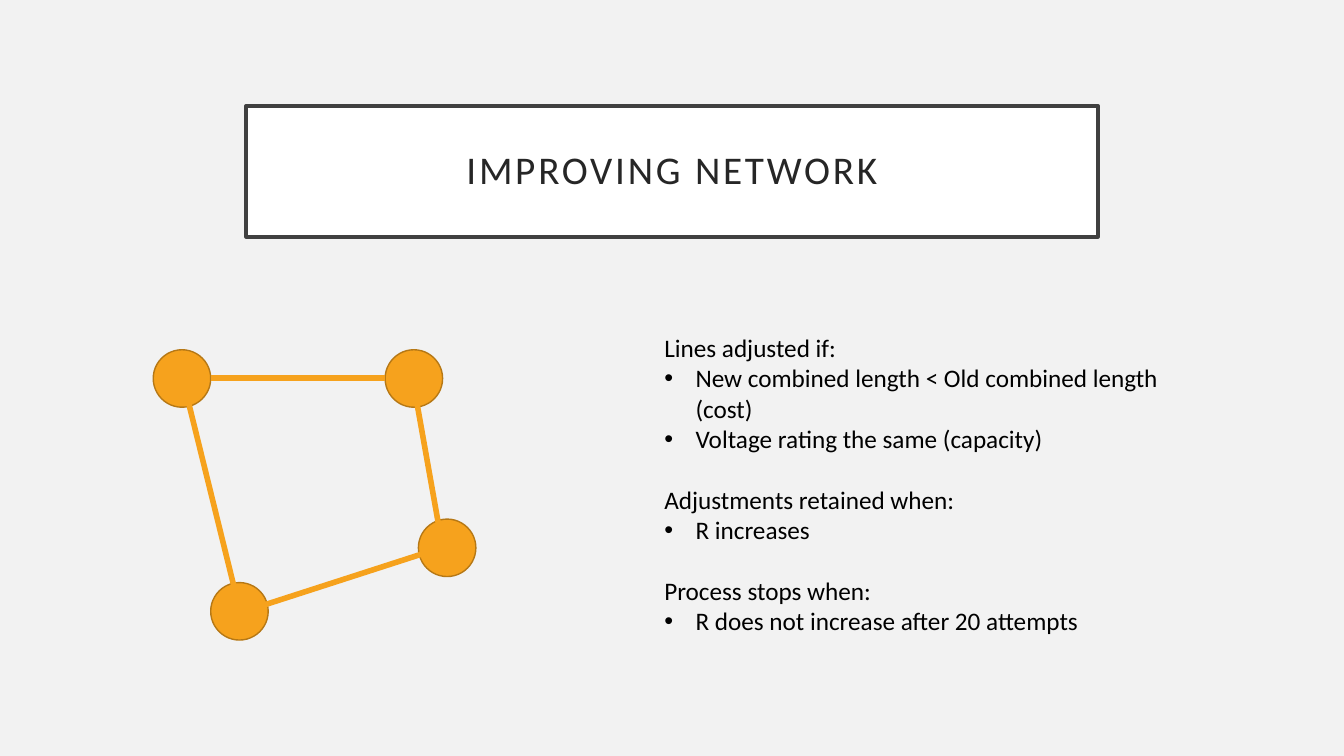
from lxml import etree
from pptx import Presentation
from pptx.dml.color import RGBColor
from pptx.enum.shapes import MSO_CONNECTOR, MSO_SHAPE
from pptx.enum.text import MSO_ANCHOR, PP_ALIGN
from pptx.oxml.ns import qn
from pptx.util import Inches, Pt

COLORS = {
    "background": "F2F2F2",
    "panel": "FFFFFF",
    "frame": "404040",
    "title": "262626",
    "node": "F6A21D",
    "node_edge": "B67815",
    "body": "000000",
}
NODE_SIZE = 0.57
NODES = [(1.52, 3.47), (2.09, 5.78), (4.15, 5.15), (3.82, 3.47)]
LINKS = [
    ((1.81, 3.75), (2.38, 6.06)),
    ((4.07, 3.63), (4.39, 5.43)),
    ((2.09, 3.75), (3.82, 3.75)),
    ((2.44, 6.06), (4.39, 5.43)),
]
RULES = [
    ("Lines adjusted if:", [
        "New combined length < Old combined length (cost)",
        "Voltage rating the same (capacity)",
    ]),
    ("Adjustments retained when:", ["R increases"]),
    ("Process stops when:", ["R does not increase after 20 attempts"]),
]
BODY_SIZE = 18
GROUP_GAP = 22
BULLET_INDENT = Inches(0.31)


def rgb(name):
    return RGBColor.from_string(COLORS[name])


def style_font(font, size, color):
    for name, value in {"name": "Calibri", "size": Pt(size)}.items():
        setattr(font, name, value)
    font.color.rgb = rgb(color)


def add_filled_shape(slide, preset, box, fill, edge, edge_width):
    shape = slide.shapes.add_shape(preset, *map(Inches, box))
    shape.shadow.inherit = False
    shape.fill.solid()
    shape.fill.fore_color.rgb = rgb(fill)
    shape.line.color.rgb = rgb(edge)
    shape.line.width = Pt(edge_width)
    return shape


def add_title(slide, text):
    panel = add_filled_shape(slide, MSO_SHAPE.RECTANGLE, (2.44, 1.05, 8.45, 1.3),
                             "panel", "frame", 2.5)
    frame = panel.text_frame
    frame.word_wrap = True
    frame.vertical_anchor = MSO_ANCHOR.MIDDLE
    for side in ("left", "top", "right", "bottom"):
        setattr(frame, f"margin_{side}", Inches(0.2))
    heading = frame.paragraphs[0]
    heading.alignment = PP_ALIGN.CENTER
    heading.line_spacing = 0.9
    run = heading.add_run()
    run.text = text
    style_font(run.font, 28, "title")
    run.font._element.set("spc", "200")


def add_link(slide, start, end):
    link = slide.shapes.add_connector(MSO_CONNECTOR.STRAIGHT, *map(Inches, start + end))
    link.line.color.rgb = rgb("node")
    link.line.width = Pt(4)
    etree.SubElement(link._element.spPr, qn("a:effectLst"))


def add_bullet(paragraph):
    props = paragraph._p.get_or_add_pPr()
    props.set("marL", str(BULLET_INDENT))
    props.set("indent", str(-BULLET_INDENT))
    etree.SubElement(props, qn("a:buFont")).set("typeface", "Arial")
    etree.SubElement(props, qn("a:buChar")).set("char", "•")


def add_rules(slide, rules):
    """Write each condition followed by its bulleted criteria."""
    box = slide.shapes.add_textbox(*map(Inches, (6.49, 3.25, 5.32, 3.74)))
    frame = box.text_frame
    frame.word_wrap = True
    for index, (condition, criteria) in enumerate(rules):
        paragraph = frame.add_paragraph() if index else frame.paragraphs[0]
        if index:
            paragraph.space_before = Pt(GROUP_GAP)
        paragraph.text = condition
        style_font(paragraph.runs[0].font, BODY_SIZE, "body")
        for criterion in criteria:
            paragraph = frame.add_paragraph()
            add_bullet(paragraph)
            paragraph.text = criterion
            style_font(paragraph.runs[0].font, BODY_SIZE, "body")


def main():
    deck = Presentation()
    deck.slide_width, deck.slide_height = Inches(13.33), Inches(7.5)
    slide = deck.slides.add_slide(deck.slide_layouts[6])
    slide.background.fill.solid()
    slide.background.fill.fore_color.rgb = rgb("background")

    add_title(slide, "IMPROVING NETWORK")
    for left, top in NODES:
        add_filled_shape(slide, MSO_SHAPE.OVAL, (left, top, NODE_SIZE, NODE_SIZE),
                         "node", "node_edge", 1)
    for start, end in LINKS:
        add_link(slide, start, end)
    add_rules(slide, RULES)
    deck.save("out.pptx")


if __name__ == "__main__":
    main()
